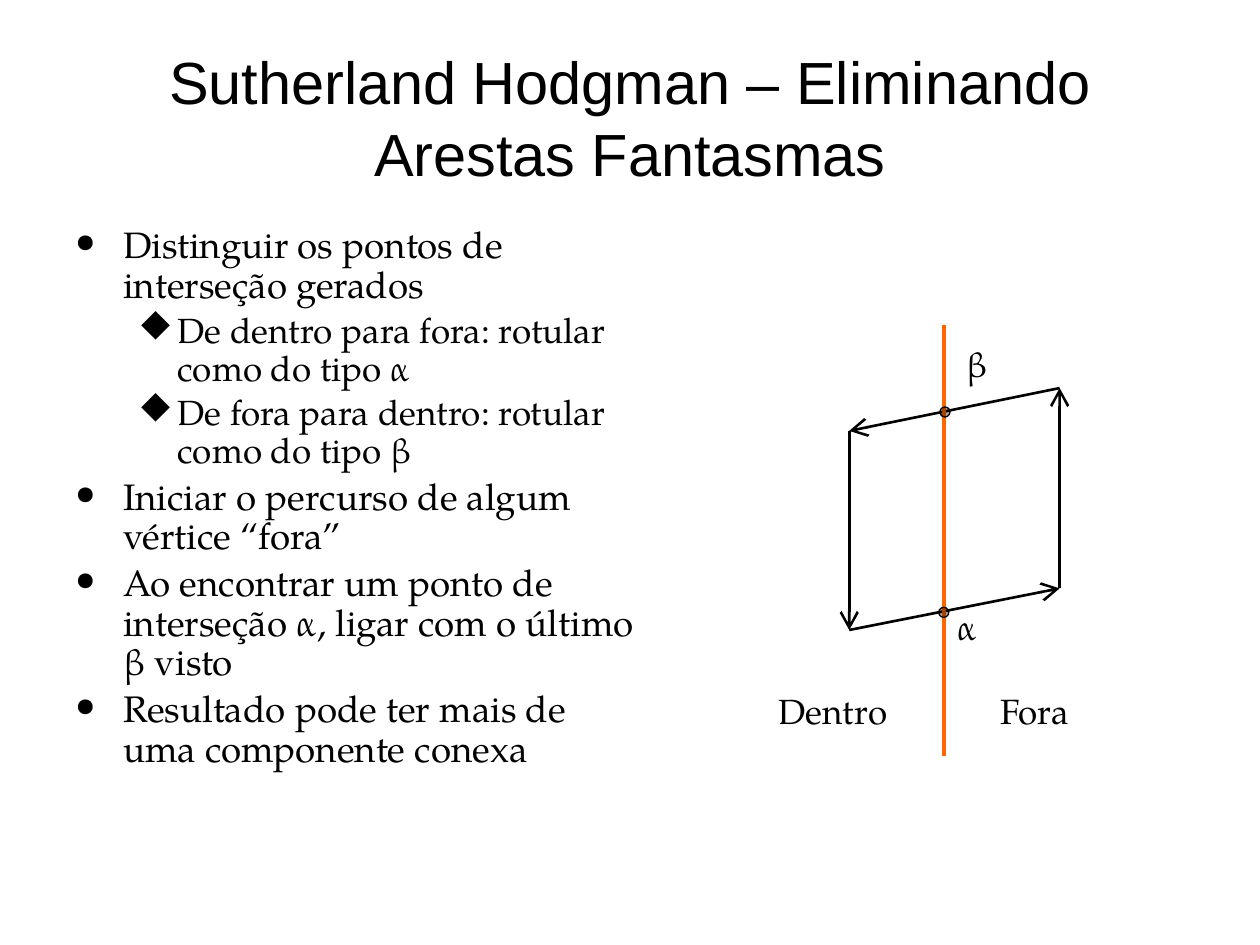
from lxml import etree
from pptx import Presentation
from pptx.dml.color import RGBColor
from pptx.enum import shapes, text
from pptx.oxml import ns
from pptx.util import Inches, Pt

BLACK = RGBColor(0x00, 0x00, 0x00)
ORANGE = RGBColor(0xFF, 0x66, 0x00)
SERIF = "TeX Gyre Pagella"

# level, text
BULLETS = [
    (0, "Distinguir os pontos de interseção gerados"),
    (1, "De dentro para fora: rotular como do tipo α"),
    (1, "De fora para dentro: rotular como do tipo β"),
    (0, "Iniciar o percurso de algum vértice “fora”"),
    (0, "Ao encontrar um ponto de interseção α, ligar com o último β visto"),
    (0, "Resultado pode ter mais de uma componente conexa"),
]
# bullet font, bullet character, left margin, hanging indent, text size
# ("u" is the solid diamond in Wingdings)
LEVELS = [
    (SERIF, "•", 0.38, 0.38, 21),
    ("Wingdings", "u", 0.81, 0.31, 20),
]

POLYGON = [(8.41, 3.08), (6.74, 3.42), (6.74, 5), (8.41, 4.67)]
LABELS = [
    ("Fora", 7.83, 5.42, 0.76),
    ("Dentro", 6.08, 5.42, 1.06),
    ("α", 7.49, 4.76, 0.38),
    ("β", 7.58, 2.67, 0.36),
]
INTERSECTIONS = [(7.46, 3.23), (7.45, 4.82)]


def add_child(parent, tag, **attrs):
    return etree.SubElement(parent, ns.qn(tag), attrs)


def write(p, content, size=20, font=SERIF, align=None):
    p.alignment = align
    r = p.add_run()
    r.text = content
    r.font.size = Pt(size)
    r.font.name = font
    r.font.color.rgb = BLACK


def add_title(s, content):
    sp = s.shapes.title
    sp.left, sp.top = Inches(0.5), Inches(0.3)
    sp.width, sp.height = Inches(9), Inches(1.25)
    tf = sp.text_frame
    tf.vertical_anchor = text.MSO_ANCHOR.MIDDLE
    write(tf.paragraphs[0], content, size=34, font="Arial",
          align=text.PP_ALIGN.CENTER)


def add_bullets(s, items):
    tf = s.shapes.add_textbox(Inches(0.5), Inches(1.75),
                              Inches(4.67), Inches(4.95)).text_frame
    tf.word_wrap = True
    for i, (level, content) in enumerate(items):
        bullet_font, char, margin, hang, size = LEVELS[level]
        p = tf.add_paragraph() if i else tf.paragraphs[0]
        pPr = p._p.get_or_add_pPr()
        pPr.set("marL", str(Inches(margin)))
        pPr.set("indent", str(-Inches(hang)))
        add_child(pPr, "a:buFont", typeface=bullet_font)
        add_child(pPr, "a:buChar", char=char)
        p.level = level
        p.line_spacing = 0.9
        p.space_before = Pt(4 if i else 0)
        write(p, content, size=size)


def add_label(s, content, x, y, width):
    tf = s.shapes.add_textbox(Inches(x), Inches(y),
                              Inches(width), Inches(0.43)).text_frame
    tf.word_wrap = False
    tf.auto_size = text.MSO_AUTO_SIZE.SHAPE_TO_FIT_TEXT
    tf.margin_left = tf.margin_right = Inches(0.05)
    write(tf.paragraphs[0], content, align=text.PP_ALIGN.CENTER)


def add_line(s, start, end, color=BLACK, width=1.5, arrow=False):
    cx = s.shapes.add_connector(shapes.MSO_CONNECTOR.STRAIGHT,
                                *map(Inches, start + end))
    cx.line.color.rgb = color
    cx.line.width = Pt(width)
    if arrow:
        add_child(cx.line._get_or_add_ln(), "a:tailEnd",
                  type="arrow", w="lg", len="lg")
    add_child(cx._element.spPr, "a:effectLst")


def add_intersection(s, x, y):
    """Small translucent dot where an edge crosses the clipping line."""
    sp = s.shapes.add_shape(shapes.MSO_SHAPE.OVAL, Inches(x), Inches(y),
                            Inches(0.08), Inches(0.08))
    sp.shadow.inherit = False
    sp.fill.solid()
    sp.fill.fore_color.rgb = BLACK
    color = sp._element.spPr.find(ns.qn("a:solidFill"))[0]
    add_child(color, "a:alpha", val="35000")
    sp.line.color.rgb = BLACK
    sp.line.width = Pt(0.75)


def main():
    prs = Presentation()
    prs.slide_width, prs.slide_height = Inches(10), Inches(7.5)
    s = prs.slides.add_slide(prs.slide_layouts[5])
    add_title(s, "Sutherland Hodgman – Eliminando Arestas Fantasmas")
    add_bullets(s, BULLETS)
    for start, end in zip(POLYGON, POLYGON[1:] + POLYGON[:1]):
        add_line(s, start, end, arrow=True)
    add_line(s, (7.49, 2.58), (7.49, 6), color=ORANGE, width=2.25)
    for label in LABELS:
        add_label(s, *label)
    for point in INTERSECTIONS:
        add_intersection(s, *point)
    prs.save("out.pptx")


if __name__ == "__main__":
    main()
